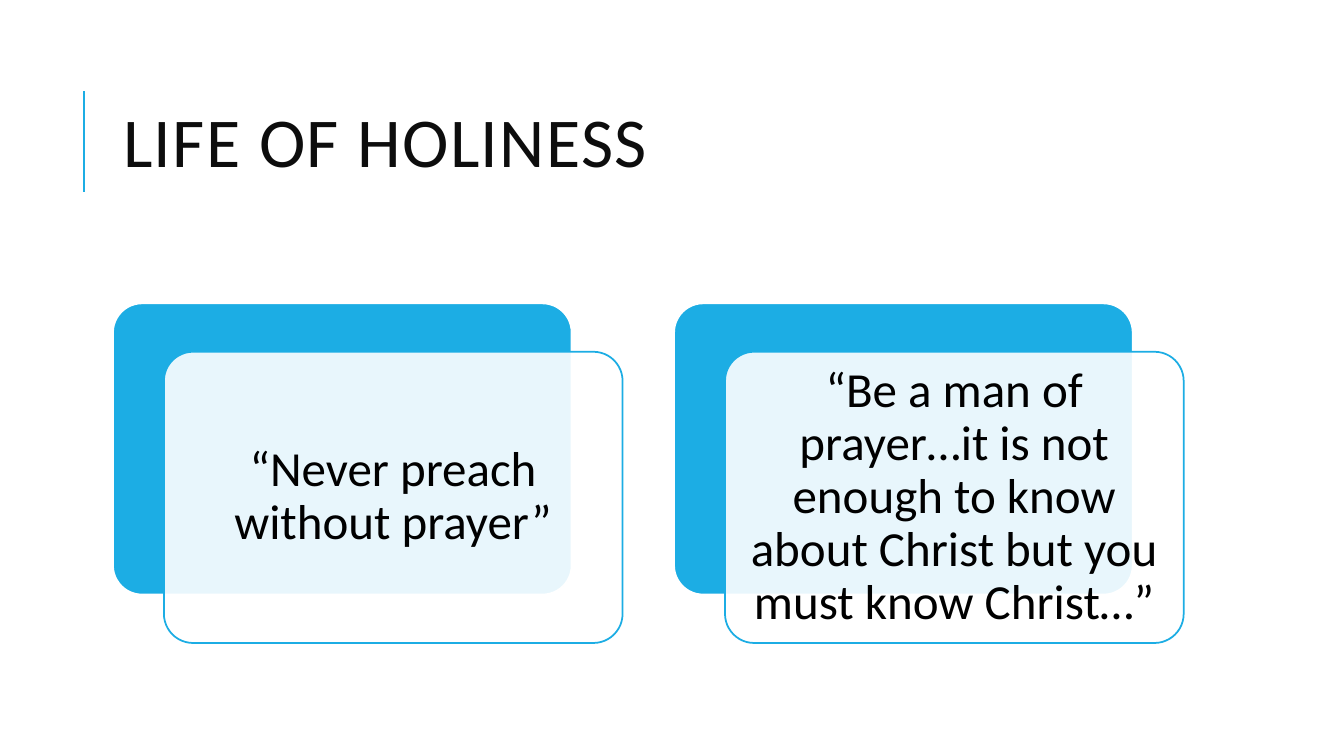
import pptx
import pptx.dml.color
import pptx.enum.shapes
import pptx.enum.text
import pptx.oxml.ns
import pptx.util
from lxml import etree

Pt = pptx.util.Pt
COLORS = {"accent": "1CADE4", "white": "FFFFFF", "title": "0D0D0D", "text": "000000"}
FONT = "Calibri"
QUOTES = [
    "“Never preach without prayer”",
    "“Be a man of prayer…it is not enough to know about Christ but you must know Christ…”",
]
CARD_LEFT, CARD_TOP, CARD_WIDTH, CARD_HEIGHT = 80.7, 216.7, 327.6, 208
CARD_PITCH = 400.8
FRONT_DX, FRONT_DY = 36.4, 34.6


def rgb(name):
    return pptx.dml.color.RGBColor.from_string(COLORS[name])


def style_text(p, size, color, align, spacing):
    p.font.name = FONT
    p.font.size = Pt(size)
    p.font.color.rgb = rgb(color)
    p.alignment = align
    p.line_spacing = spacing


def add_title(s, text):
    sp = s.shapes.title
    sp.left, sp.top, sp.width, sp.height = Pt(80.7), Pt(46), Pt(765.4), Pt(118)
    tf = sp.text_frame
    tf.auto_size = pptx.enum.text.MSO_AUTO_SIZE.NONE
    tf.vertical_anchor = pptx.enum.text.MSO_ANCHOR.MIDDLE
    p = tf.paragraphs[0]
    r = p.add_run()
    r.text = text
    style_text(p, 50, "title", pptx.enum.text.PP_ALIGN.LEFT, 0.8)
    r.font._element.set("spc", "100")


def add_rule(s, x, top, bottom):
    line = s.shapes.add_connector(
        pptx.enum.shapes.MSO_CONNECTOR.STRAIGHT, Pt(x), Pt(bottom), Pt(x), Pt(top))
    line.line.color.rgb = rgb("accent")
    line.line.width = Pt(1.5)
    etree.SubElement(line._element.spPr, pptx.oxml.ns.qn("a:effectLst"))


def add_card(s, left, top, fill, outline):
    sp = s.shapes.add_shape(
        pptx.enum.shapes.MSO_SHAPE.ROUNDED_RECTANGLE,
        Pt(left), Pt(top), Pt(CARD_WIDTH), Pt(CARD_HEIGHT))
    sp.adjustments[0] = 0.1
    sp.shadow.inherit = False
    sp.fill.solid()
    sp.fill.fore_color.rgb = rgb(fill)
    sp.line.color.rgb = rgb(outline)
    sp.line.width = Pt(1.25)
    return sp


def set_opacity(sp, percent):
    color = sp._element.spPr.find(".//" + pptx.oxml.ns.qn("a:srgbClr"))
    alpha = etree.SubElement(color, pptx.oxml.ns.qn("a:alpha"))
    alpha.set("val", str(percent * 1000))


def add_quote(s, left, text):
    add_card(s, left, CARD_TOP, "accent", "white")
    sp = add_card(s, left + FRONT_DX, CARD_TOP + FRONT_DY, "white", "accent")
    set_opacity(sp, 90)
    tf = sp.text_frame
    tf.word_wrap = True
    tf.vertical_anchor = pptx.enum.text.MSO_ANCHOR.MIDDLE
    tf.margin_left = tf.margin_right = tf.margin_top = tf.margin_bottom = Pt(10.5)
    p = tf.paragraphs[0]
    p.text = text
    style_text(p, 35, "text", pptx.enum.text.PP_ALIGN.CENTER, 0.9)


def main():
    """Build the slide with its title, rule and quote cards."""
    prs = pptx.Presentation()
    prs.slide_width, prs.slide_height = Pt(960), Pt(540)
    s = prs.slides.add_slide(prs.slide_layouts.get_by_name("Title Only"))
    add_rule(s, 60, 65, 137)
    add_title(s, "LIFE OF HOLINESS")
    for i, quote in enumerate(QUOTES):
        add_quote(s, CARD_LEFT + i * CARD_PITCH, quote)
    prs.save("out.pptx")


if __name__ == "__main__":
    main()
